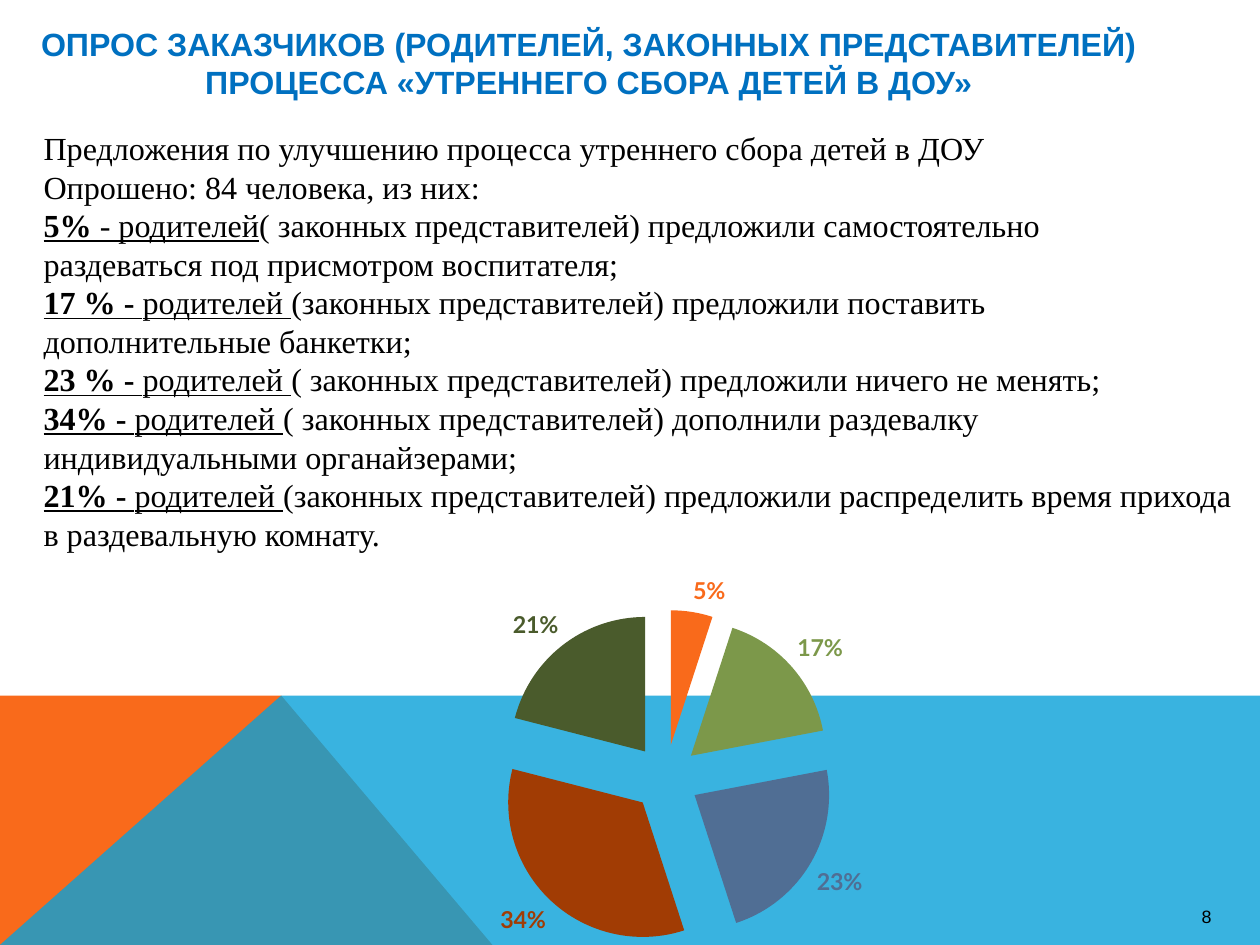
import pptx
import pptx.chart.data
import pptx.dml.color
import pptx.enum.chart
import pptx.enum.text
import pptx.oxml
import pptx.oxml.ns
import pptx.util
from dataclasses import dataclass

Pt = pptx.util.Pt
WIDTH, HEIGHT = 705.6, 529.2


@dataclass(frozen=True)
class Theme:
    title_font: str = "Arial"
    body_font: str = "Times New Roman"
    chart_font: str = "Lato"
    title_color: str = "0070C0"
    text_color: str = "000000"
    orange: str = "F96A1B"
    blue: str = "08A1D9"
    slices: tuple = ("F96A1B", "7C984A", "506E94", "A13C04", "4A5B2C")
    text_size: float = 18
    label_size: float = 13
    number_size: float = 10


def rgb(color):
    return pptx.dml.color.RGBColor.from_string(color)


class SlideBuilder:
    def __init__(self, page, theme):
        self.page = page
        self.theme = theme

    def style(self, font, name, size, color, bold=False):
        font.name, font.size, font.bold = name, Pt(size), bold
        font.color.rgb = rgb(color)

    def polygon(self, points, color, opacity=100):
        corners = [(Pt(x), Pt(y)) for x, y in points]
        builder = self.page.shapes.build_freeform(*corners[0], scale=1.0)
        builder.add_line_segments(corners[1:], close=True)
        shape = builder.convert_to_shape()
        shape.shadow.inherit = False
        shape.fill.solid()
        shape.fill.fore_color.rgb = rgb(color)
        shape.line.fill.background()
        if opacity < 100:
            fill = shape.fill._xPr.find(".//" + pptx.oxml.ns.qn("a:srgbClr"))
            fill.append(pptx.oxml.parse_xml(
                f'<a:alpha {pptx.oxml.ns.nsdecls("a")} val="{opacity * 1000}"/>'))

    def text(self, left, top, width, height, paragraphs, font, size, color,
             bold=False, centered=False, inset=True):
        """Each paragraph is a list of (text, bold, underline) spans."""
        frame = self.page.shapes.add_textbox(
            Pt(left), Pt(top), Pt(width), Pt(height)).text_frame
        frame.word_wrap = True
        if not inset:
            frame.margin_left = frame.margin_right = 0
            frame.margin_top = frame.margin_bottom = 0
        for index, spans in enumerate(paragraphs):
            para = frame.add_paragraph() if index else frame.paragraphs[0]
            self.style(para.font, font, size, color, bold)
            if centered:
                para.alignment = pptx.enum.text.PP_ALIGN.CENTER
            for words, strong, underline in spans:
                span = para.add_run()
                span.text = words
                if strong:
                    span.font.bold = True
                if underline:
                    span.font.underline = True

    def pie(self, left, top, width, height, values, explosion, plot_area):
        theme = self.theme
        data = pptx.chart.data.CategoryChartData(number_format='0"%"')
        data.categories = [f"{value}%" for value in values]
        data.add_series("Series 1", values)
        chart = self.page.shapes.add_chart(
            pptx.enum.chart.XL_CHART_TYPE.PIE,
            Pt(left), Pt(top), Pt(width), Pt(height), data).chart
        chart.has_legend = chart.has_title = False
        self.style(chart.font, theme.chart_font, theme.number_size, theme.text_color)
        plot = chart.plots[0]
        plot.vary_by_categories = False
        series = plot.series[0]
        for index, color in enumerate(theme.slices):
            point = series.points[index]
            point.format.fill.solid()
            point.format.fill.fore_color.rgb = rgb(color)
            point.format.line.fill.background()
            label = point.data_label
            self.style(label.font, theme.chart_font, theme.label_size, color, True)
            label.position = pptx.enum.chart.XL_LABEL_POSITION.OUTSIDE_END

        # Pull the slices apart and fix the plot area
        names = pptx.oxml.ns.nsdecls("c")
        first_point = series._element.find(pptx.oxml.ns.qn("c:dPt"))
        first_point.addprevious(pptx.oxml.parse_xml(
            f'<c:explosion {names} val="{explosion}"/>'))
        sizes = "".join(f'<c:{key} val="{value}"/>'
                        for key, value in zip("xywh", plot_area))
        area = chart._chartSpace.chart.plotArea
        for old in area.findall(pptx.oxml.ns.qn("c:layout")):
            area.remove(old)
        area.insert(0, pptx.oxml.parse_xml(
            f'<c:layout {names}><c:manualLayout><c:layoutTarget val="inner"/>'
            f'<c:xMode val="edge"/><c:yMode val="edge"/>{sizes}'
            '</c:manualLayout></c:layout>'))


def plain(words):
    return [(words, False, False)]


def answer(share, parents, rest):
    return [(share, True, True), (parents, False, True), (rest, False, False)]


TITLE = ("ОПРОС ЗАКАЗЧИКОВ (РОДИТЕЛЕЙ, ЗАКОННЫХ ПРЕДСТАВИТЕЛЕЙ) "
         "ПРОЦЕССА «УТРЕННЕГО СБОРА ДЕТЕЙ В ДОУ»")
SURVEY = [
    plain("Предложения по улучшению процесса утреннего сбора детей в ДОУ"),
    plain("Опрошено: 84 человека, из них:"),
    answer("5%", " - родителей", "( законных представителей) предложили самостоятельно"),
    plain("раздеваться под присмотром воспитателя;"),
    answer("17 % - ", "родителей ", "(законных представителей) предложили поставить"),
    plain("дополнительные банкетки;"),
    answer("23 % - ", "родителей ", "( законных представителей) предложили ничего не менять;"),
    answer("34% - ", "родителей ", "( законных представителей) дополнили раздевалку"),
    plain("индивидуальными органайзерами;"),
    answer("21% - ", "родителей ",
           "(законных представителей) предложили распределить время прихода"),
    plain("в раздевальную комнату."),
]


def main():
    deck = pptx.Presentation()
    deck.slide_width, deck.slide_height = Pt(WIDTH), Pt(HEIGHT)
    theme = Theme()
    slide = SlideBuilder(deck.slides.add_slide(deck.slide_layouts[6]), theme)

    # Coloured band at the bottom
    band_top, peak = 389.5, 157.5
    slide.polygon([(0, HEIGHT), (0, band_top), (peak, band_top), (275.8, HEIGHT)],
                  theme.orange)
    slide.polygon([(0, HEIGHT), (peak, band_top), (WIDTH, band_top), (WIDTH, HEIGHT)],
                  theme.blue, opacity=80)

    # Page number, title and survey answers
    slide.text(673, 507, 16.5, 12, [plain("8")], theme.title_font,
               theme.number_size, theme.text_color, inset=False)
    slide.text(0, 10, 659.5, 59, [plain(TITLE)], theme.title_font,
               theme.text_size, theme.title_color, bold=True, centered=True)
    slide.text(17.3, 68.4, 688, 247, SURVEY, theme.body_font,
               theme.text_size, theme.text_color)

    # Shares of the answers
    slide.pie(195, 311, 359.3, 235.4, (5, 17, 23, 34, 21), 25,
              (0.23, 0.13, 0.53, 0.8))

    deck.save("out.pptx")


if __name__ == "__main__":
    main()
